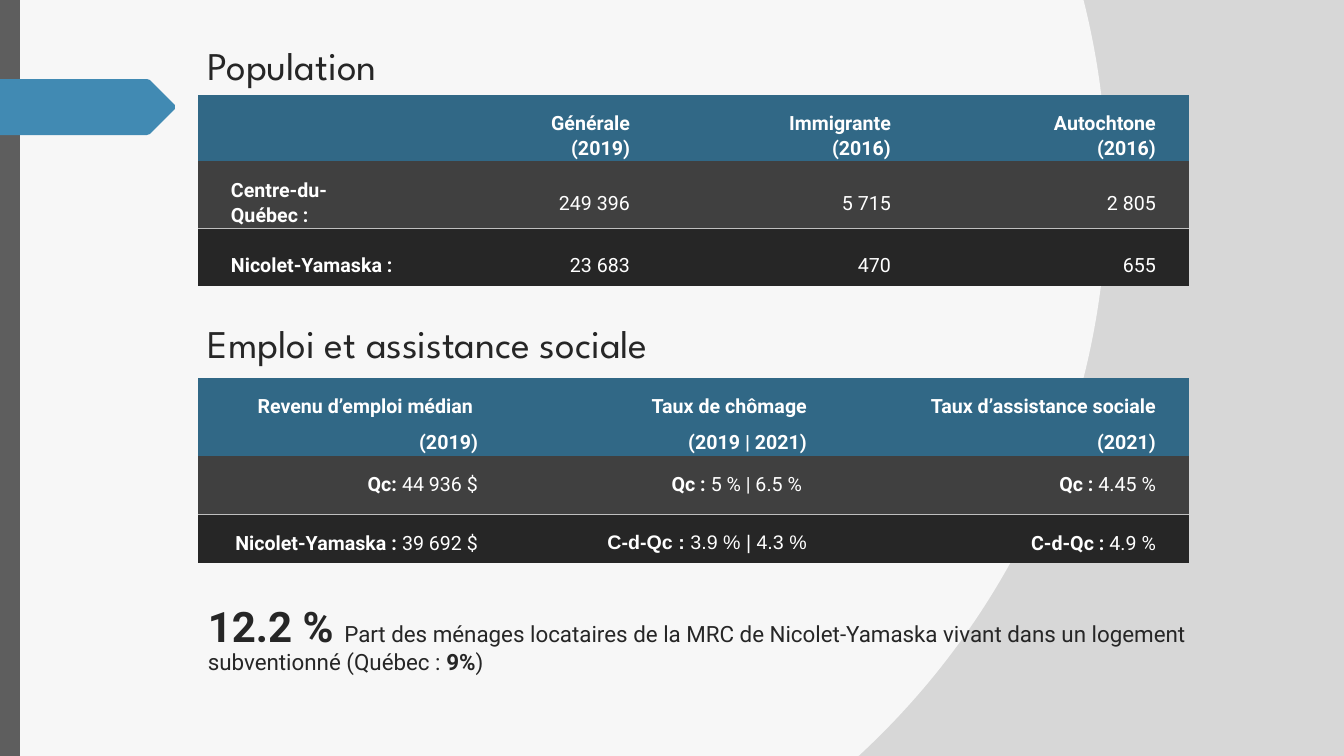
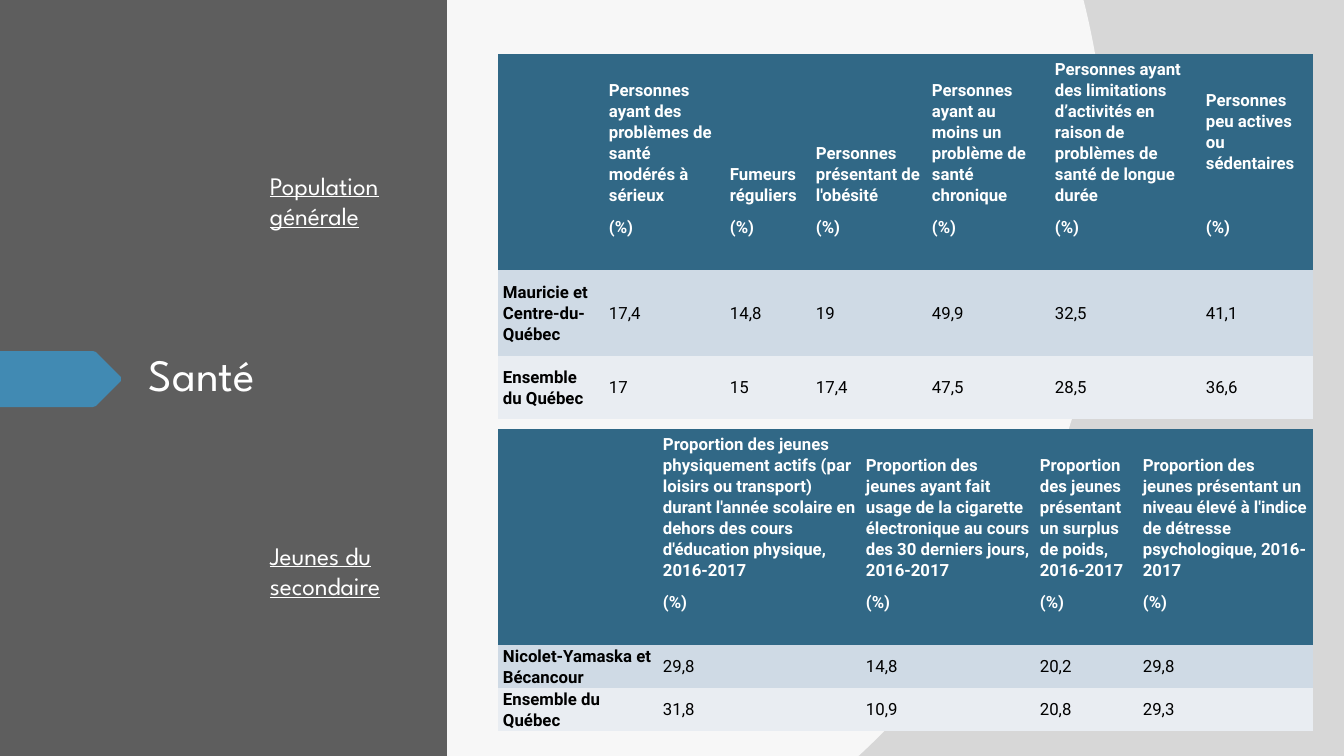
"""Builds two slides of regional statistics: population and employment, then health."""
from dataclasses import dataclass, replace

from lxml import etree
from pptx import Presentation
from pptx.dml.color import RGBColor
from pptx.enum.shapes import MSO_SHAPE
from pptx.enum.text import MSO_ANCHOR, PP_ALIGN
from pptx.oxml.ns import qn
from pptx.util import Emu, Pt

RECTANGLE = MSO_SHAPE.RECTANGLE
TOP, MIDDLE, BOTTOM = MSO_ANCHOR.TOP, MSO_ANCHOR.MIDDLE, MSO_ANCHOR.BOTTOM
LEFT, RIGHT = PP_ALIGN.LEFT, PP_ALIGN.RIGHT

WIDTH, HEIGHT = 1344, 756
SCALE = 12192000 / WIDTH
HEADING_FONT, BODY_FONT, FALLBACK_FONT = "League Spartan", "Roboto", "Arial"
PALE, GREY, PANEL, ACCENT = "F7F7F7", "D7D7D7", "5E5E5E", "418AB3"
HEADER, INK, WHITE, BLACK, RULE = "316886", "262626", "FFFFFF", "000000", "BFBFBF"
PLAIN_TABLE = "{2D5ABB26-0587-4C30-8999-92F81FD0307C}"


def px(length):
    """Turns px into EMU."""
    return Emu(round(length * SCALE))


def rgb(value):
    """Turns a hex string into a colour."""
    return RGBColor.from_string(value)


@dataclass(frozen=True)
class TableLook:
    """Holds the style of one family of tables; margins are left, top, right, bottom."""
    fills: tuple
    body_color: str
    size: int
    margins: tuple
    header_bottom: int
    header_anchor: int
    body_anchor: int
    label_align: int
    value_align: int
    header_gap: int = 8
    rule: str = ""


DARK = TableLook((HEADER, "404040", INK), WHITE, 14, (33, 16, 33, 0), 0,
                 TOP, TOP, RIGHT, RIGHT, rule=RULE)
DARK_LABELLED = replace(DARK, body_anchor=MIDDLE, label_align=LEFT, header_gap=0)
LIGHT = TableLook((HEADER, "CFDAE5", "E9EDF2"), BLACK, 12, (5, 0, 5, 0), 32,
                  BOTTOM, MIDDLE, LEFT, LEFT)


class Deck:
    """Holds the presentation, its shared style and the current slide."""

    def __init__(self):
        """Opens an empty widescreen presentation."""
        self.prs = Presentation()
        self.prs.slide_width, self.prs.slide_height = px(WIDTH), px(HEIGHT)
        self.slide = None

    def new_slide(self, panel_width, tip, middle):
        """Starts a slide with its curved backdrop, side panel and pointer."""
        self.slide = self.prs.slides.add_slide(self.prs.slide_layouts[6])
        self.backdrop()
        panel = self.slide.shapes.add_shape(RECTANGLE, 0, 0, px(panel_width), px(HEIGHT))
        self.paint(panel, PANEL)
        upper = [(0, -28), (tip - 28, -28), (tip - 25, -27), (tip, -2)]
        edge = upper + [(x, -y) for x, y in reversed(upper)]
        self.pointer([(x, middle + y) for x, y in edge])

    def backdrop(self):
        """Fills the background with a hard-edged circular gradient."""
        self.slide.background.fill.solid()
        properties = self.slide.element.find(".//" + qn("p:bgPr"))
        properties.remove(properties.find(qn("a:solidFill")))
        gradient = etree.Element(qn("a:gradFill"), rotWithShape="1")
        stops = etree.SubElement(gradient, qn("a:gsLst"))
        for color in (PALE, GREY):
            stop = etree.SubElement(stops, qn("a:gs"), pos="100000")
            etree.SubElement(stop, qn("a:srgbClr"), val=color)
        circle = etree.SubElement(gradient, qn("a:path"))
        circle.set("path", "circle")
        etree.SubElement(circle, qn("a:fillToRect"),
                         l="50000", t="50000", r="100000", b="100000")
        properties.insert(0, gradient)

    def paint(self, shape, color):
        """Gives a shape a flat fill without line or shadow."""
        shape.shadow.inherit = False
        shape.fill.solid()
        shape.fill.fore_color.rgb = rgb(color)
        shape.line.fill.background()

    def pointer(self, points):
        """Draws the accent pointer as a closed outline."""
        builder = self.slide.shapes.build_freeform(*points[0], scale=SCALE)
        builder.add_line_segments(points[1:], close=True)
        self.paint(builder.convert_to_shape(), ACCENT)

    def font(self, paragraph, name, size, color):
        """Sets the font shared by the runs of a paragraph."""
        paragraph.font.name = name
        paragraph.font.size = Pt(size)
        paragraph.font.color.rgb = rgb(color)

    def marked_runs(self, paragraph, text):
        """Adds runs, with bold parts between asterisks."""
        for index, part in enumerate(text.split("*")):
            if part:
                run = paragraph.add_run()
                run.text = part
                if index % 2:
                    run.font.bold = True

    def text(self, box, words, size, color=INK, name=HEADING_FONT):
        """Adds a wrapped one-paragraph text box and returns the paragraph."""
        frame = self.slide.shapes.add_textbox(*map(px, box)).text_frame
        frame.word_wrap = True
        paragraph = frame.paragraphs[0]
        self.font(paragraph, name, size, color)
        self.marked_runs(paragraph, words)
        return paragraph

    def table(self, box, widths, heights, rows, look):
        """Adds a table whose rows grow with their text and returns it."""
        holder = self.slide.shapes.add_table(len(rows), len(widths), *map(px, box))
        table = holder.table
        table.first_row = table.horz_banding = False
        table._tbl.tblPr.find(qn("a:tableStyleId")).text = PLAIN_TABLE
        for column, width in zip(table.columns, widths):
            column.width = px(width)
        for row, height in zip(table.rows, heights):
            row.height = px(height)
        holder.height = px(box[3])
        for r, words in enumerate(rows):
            for c, word in enumerate(words):
                self.fill_cell(table.cell(r, c), word, r, c, look)
        return table

    def fill_cell(self, cell, words, r, c, look):
        """Writes and styles one table cell."""
        header = r == 0
        left, top, right, bottom = look.margins
        cell.margin_left, cell.margin_top, cell.margin_right = px(left), px(top), px(right)
        cell.margin_bottom = px(look.header_bottom if header else bottom)
        cell.vertical_anchor = look.header_anchor if header else look.body_anchor
        cell.fill.solid()
        cell.fill.fore_color.rgb = rgb(look.fills[r])
        if look.rule and not header:
            self.cell_rule(cell, "a:lnB" if r == 1 else "a:lnT", look.rule)
        for index, line in enumerate(words.split("\n")):
            frame = cell.text_frame
            paragraph = frame.add_paragraph() if index else frame.paragraphs[0]
            paragraph.alignment = look.value_align if c or header else look.label_align
            paragraph.line_spacing = 1.07
            paragraph.space_after = Pt(look.header_gap if header else 8)
            self.font(paragraph, BODY_FONT, look.size, WHITE if header else look.body_color)
            paragraph.font.bold = header
            self.marked_runs(paragraph, line)

    def cell_rule(self, cell, side, color):
        """Draws a thin border along one side of a cell."""
        border = etree.Element(qn(side), w=str(Pt(1)))
        fill = etree.SubElement(border, qn("a:solidFill"))
        etree.SubElement(fill, qn("a:srgbClr"), val=color)
        cell._tc.get_or_add_tcPr().insert(0, border)


def population_slide(deck):
    """Builds the population and employment slide."""
    deck.new_slide(20, 175, 107)
    deck.text((198, 36, 1070, 141), "Population", 28)
    deck.table((198, 95, 991, 193), (238, 227, 261, 265), (58, 67, 58), [
        ("", "Générale\n(2019)", "Immigrante\n(2016)", "Autochtone\n(2016)"),
        ("*Centre-du-Québec :*", "249 396", "5 715", "2 805"),
        ("*Nicolet-Yamaska :*", "23 683", "470", "655"),
    ], DARK_LABELLED)
    deck.text((198, 314, 1070, 82), "Emploi et assistance sociale", 28)
    employment = deck.table((198, 378, 991, 185), (313, 329, 349), (70, 59, 49), [
        ("Revenu d’emploi médian \n(2019)", "Taux de chômage\n(2019 | 2021)",
         "Taux d’assistance sociale\n(2021)"),
        ("*Qc: *44 936 $", "*Qc : *5 % | 6.5 % ", "*Qc :* 4.45 %"),
        ("*Nicolet-Yamaska : *39 692 $", "*C-d-Qc : *3.9 % | 4.3 %", "*C-d-Qc :* 4.9 %"),
    ], DARK)
    employment.cell(2, 1).text_frame.paragraphs[0].font.name = FALLBACK_FONT
    housing = deck.text(
        (198, 601, 1070, 82),
        "*12.2 % *Part des ménages locataires de la MRC de Nicolet-Yamaska vivant dans "
        "un logement subventionné (Québec : *9%*)", 16, name=BODY_FONT)
    housing.line_spacing = 0.9
    housing.runs[0].font.size = Pt(30)


def health_slide(deck):
    """Builds the health slide."""
    deck.new_slide(447, 121, 379)
    deck.text((139, 342, 270, 66), "Santé", 32, WHITE)
    for top, group in ((165, "Population générale"), (535, "Jeunes du secondaire")):
        deck.text((260, top, 207, 72), group, 18, WHITE).font.underline = True
    general = deck.table((498, 54, 815, 365), (106, 121, 86, 116, 123, 151, 112),
                         (215, 86, 63), [
        ("", "Personnes ayant des problèmes de santé modérés à sérieux\n(%)",
         "Fumeurs réguliers\n(%)", "Personnes présentant de l'obésité\n(%)",
         "Personnes ayant au moins un problème de santé chronique\n(%)",
         "Personnes ayant des limitations d’activités en raison de problèmes de santé "
         "de longue durée\n(%)",
         "Personnes peu actives ou sédentaires\n(%)"),
        ("*Mauricie et Centre-du-Québec*", "17,4", "14,8", "19", "49,9", "32,5", "41,1"),
        ("*Ensemble du Québec*", "17", "15", "17,4", "47,5", "28,5", "36,6"),
    ], LIGHT)
    general.cell(0, 6).text_frame.paragraphs[0].space_after = Pt(31)
    deck.table((498, 429, 815, 299), (160, 203, 174, 103, 175), (207, 20, 20), [
        ("", "Proportion des jeunes physiquement actifs (par loisirs ou transport) durant "
         "l'année scolaire en dehors des cours d'éducation physique, 2016-2017\n(%)",
         "Proportion des jeunes ayant fait usage de la cigarette électronique au cours "
         "des 30 derniers jours, 2016-2017\n(%)",
         "Proportion des jeunes présentant un surplus de poids, 2016-2017\n(%)",
         "Proportion des jeunes présentant un niveau élevé à l'indice de détresse "
         "psychologique, 2016-2017\n(%)"),
        ("*Nicolet-Yamaska et Bécancour*", "29,8", "14,8", "20,2", "29,8"),
        ("*Ensemble du Québec*", "31,8", "10,9", "20,8", "29,3"),
    ], LIGHT)


def main():
    """Builds and saves the presentation."""
    deck = Deck()
    population_slide(deck)
    health_slide(deck)
    deck.prs.save("out.pptx")


if __name__ == "__main__":
    main()
